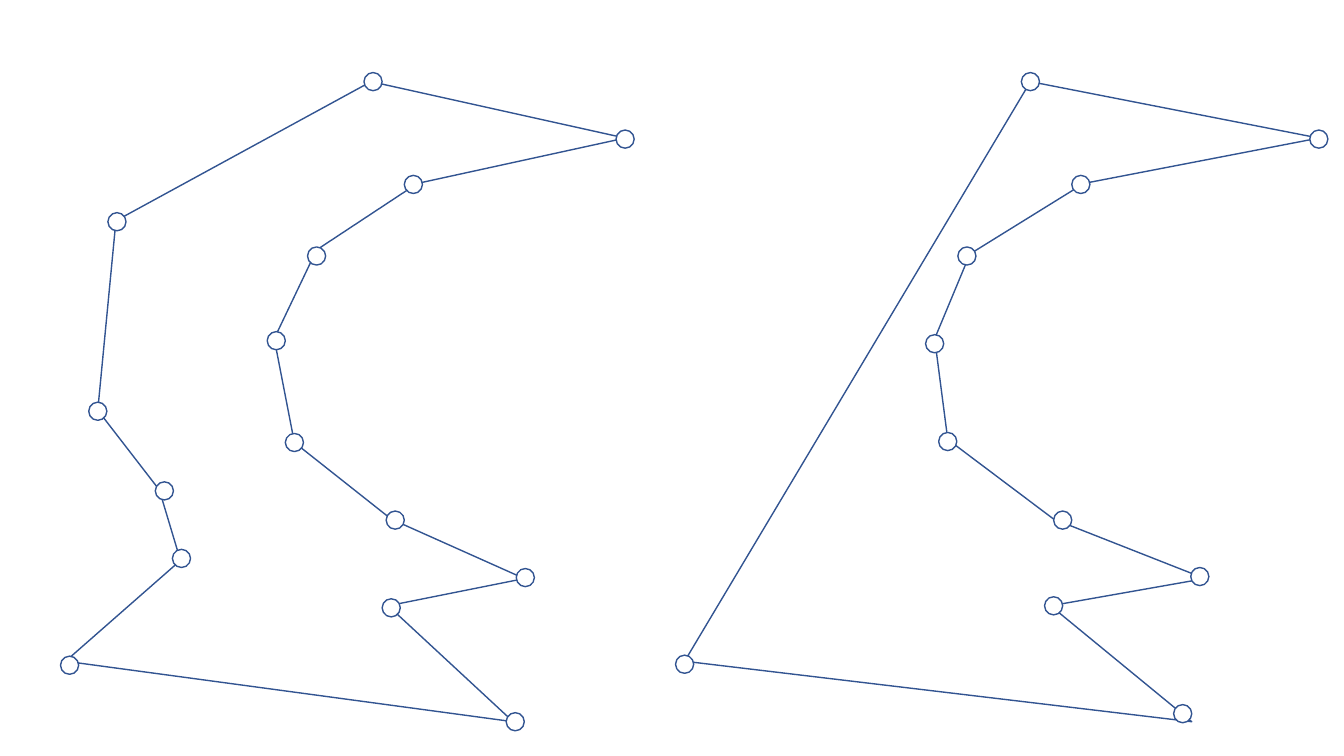
from pptx import Presentation
from pptx import util as u
from pptx.dml.color import RGBColor
from pptx.enum import shapes

COLORS = {"paper": "FFFFFF", "ink": "325491"}
LINE_WIDTH = u.Pt(1)
NODE_SIZE = 0.18

# Polygon corners, in inches, counterclockwise from the top
LEFT_CORNERS = [
    (3.68, 0.81), (1.15, 2.19), (0.97, 4.07), (1.58, 4.86), (1.79, 5.56),
    (0.65, 6.56), (5.09, 7.16), (3.85, 6.01), (5.2, 5.74), (3.88, 5.15),
    (2.92, 4.39), (2.72, 3.36), (3.14, 2.48), (4.14, 1.82), (6.2, 1.37),
]
RIGHT_CORNERS = [
    (10.22, 0.81), (6.79, 6.56), (11.82, 7.16), (10.42, 6.01), (11.95, 5.74),
    (10.45, 5.15), (9.4, 4.36), (9.27, 3.36), (9.62, 2.52), (10.75, 1.82),
    (13.08, 1.37),
]

# Node centres, in inches, set by hand close to the corners
LEFT_NODES = [
    (3.7, 0.81), (6.2, 1.38), (4.1, 1.83), (3.14, 2.54), (2.74, 3.38),
    (2.92, 4.39), (3.92, 5.16), (5.21, 5.73), (3.88, 6.03), (5.11, 7.16),
    (0.69, 6.6), (1.8, 5.54), (1.63, 4.87), (0.97, 4.08), (1.16, 2.2),
]
RIGHT_NODES = [
    (10.22, 0.81), (6.79, 6.59), (13.08, 1.38), (10.72, 1.83), (9.59, 2.54),
    (9.27, 3.41), (9.4, 4.38), (11.73, 7.08), (10.45, 6.01), (11.9, 5.72),
    (10.54, 5.16),
]


def style(shape):
    """Apply the thin outline and white fill shared by all shapes."""
    shape.shadow.inherit = False
    shape.fill.solid()
    shape.fill.fore_color.rgb = RGBColor.from_string(COLORS["paper"])
    shape.line.color.rgb = RGBColor.from_string(COLORS["ink"])
    shape.line.width = LINE_WIDTH


def add_polygon(slide, corners):
    start, *others = [(u.Inches(x), u.Inches(y)) for x, y in corners]
    builder = slide.shapes.build_freeform(*start)
    builder.add_line_segments(others, close=True)
    style(builder.convert_to_shape())


def add_node(slide, x, y):
    left, top = (u.Inches(centre - NODE_SIZE / 2) for centre in (x, y))
    size = u.Inches(NODE_SIZE)
    style(slide.shapes.add_shape(shapes.MSO_SHAPE.OVAL, left, top, size, size))


def main():
    presentation = Presentation()
    presentation.slide_width = u.Inches(13.33)
    presentation.slide_height = u.Inches(7.5)
    slide = presentation.slides.add_slide(presentation.slide_layouts[6])

    # Polygons lie behind the nodes
    for corners in (LEFT_CORNERS, RIGHT_CORNERS):
        add_polygon(slide, corners)
    for x, y in LEFT_NODES + RIGHT_NODES:
        add_node(slide, x, y)

    presentation.save("out.pptx")


if __name__ == "__main__":
    main()
